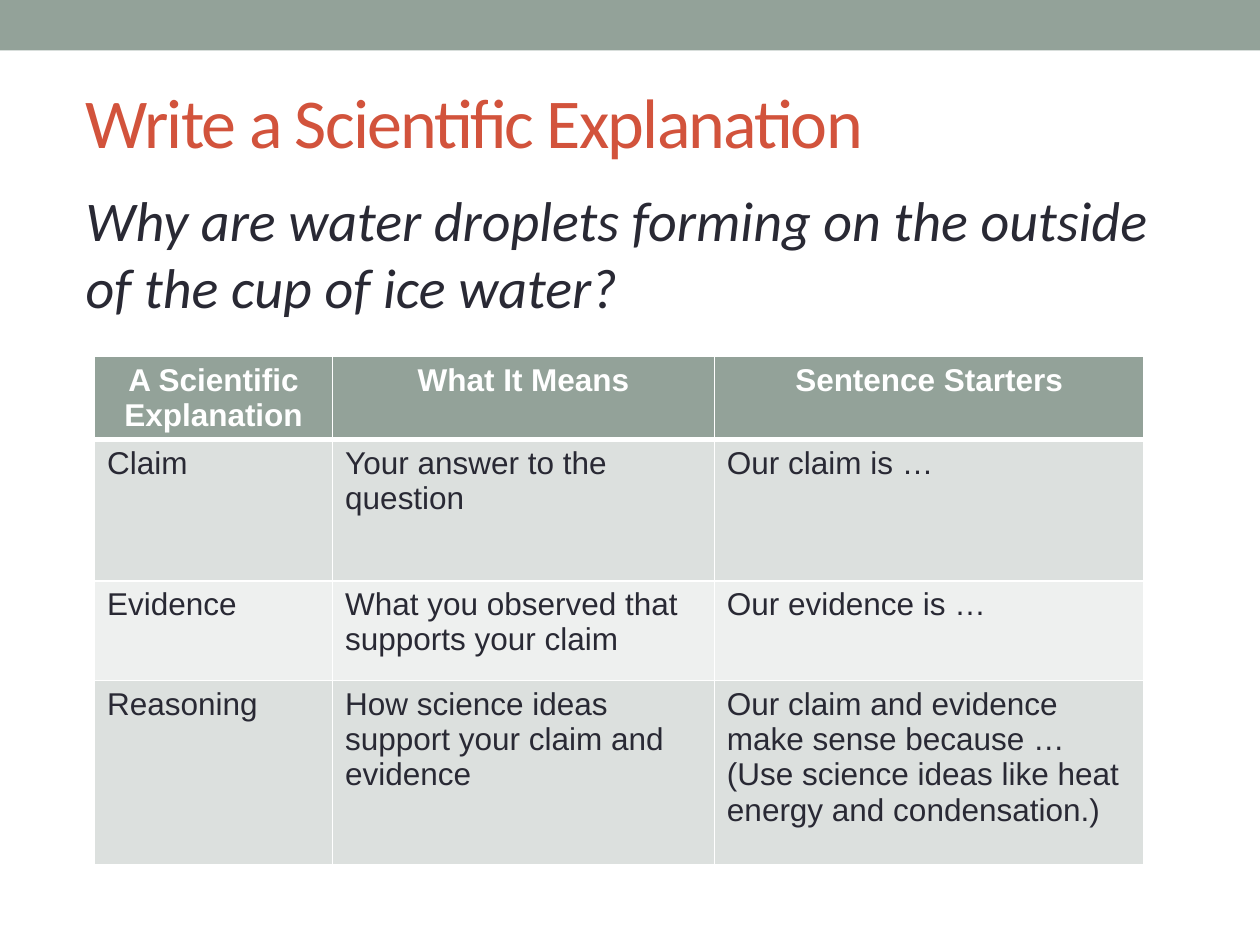
from dataclasses import dataclass

from lxml import etree
from pptx import Presentation
from pptx import util as u
from pptx.dml import color
from pptx.enum import shapes, text
from pptx.oxml import ns


@dataclass(frozen=True)
class Theme:
    sage: str = "93A299"
    rust: str = "D2533C"
    ink: str = "292934"
    white: str = "FFFFFF"
    bands: tuple = ("DCE0DE", "EEF0EF")
    heading_font: str = "Calibri"
    table_font: str = "Arial"
    title_size: int = 40
    question_size: int = 32
    table_size: int = 18
    thin: int = 1
    thick: int = 3


THEME = Theme()
WIDTH, HEIGHT = 10, 7.5
COLUMNS = (1.89, 3.03, 3.41)
ROWS = (0.45, 1.12, 0.79, 1.46)
CONTENT = (
    ("A Scientific Explanation", "What It Means", "Sentence Starters"),
    ("Claim", "Your answer to the question", "Our claim is …"),
    ("Evidence", "What you observed that supports your claim", "Our evidence is …"),
    (
        "Reasoning",
        "How science ideas support your claim and evidence",
        "Our claim and evidence make sense because … "
        "(Use science ideas like heat energy and condensation.)",
    ),
)


def rgb(value):
    return color.RGBColor.from_string(value)


def set_values(target, values):
    for name, value in values.items():
        setattr(target, name, value)


def format_runs(paragraph, ink, **values):
    for run in paragraph.runs:
        set_values(run.font, values)
        run.font.color.rgb = rgb(ink)


def add_band(slide):
    shape = slide.shapes.add_shape(
        shapes.MSO_SHAPE.RECTANGLE, 0, 0, u.Inches(WIDTH), u.Inches(0.4)
    )
    shape.shadow.inherit = False
    shape.fill.solid()
    shape.fill.fore_color.rgb = rgb(THEME.sage)
    shape.line.fill.background()


def fill_placeholder(shape, box, words, anchor, ink, **font):
    names = ("left", "top", "width", "height")
    set_values(shape, dict(zip(names, map(u.Inches, box))))
    frame = shape.text_frame
    frame.text = words
    set_values(frame, {
        "word_wrap": True,
        "auto_size": text.MSO_AUTO_SIZE.NONE,
        "vertical_anchor": anchor,
    })
    paragraph = frame.paragraphs[0]
    paragraph.alignment = text.PP_ALIGN.LEFT
    format_runs(paragraph, ink, name=THEME.heading_font, **font)
    return paragraph


def remove_bullet(paragraph):
    properties = paragraph._p.get_or_add_pPr()
    set_indent = {"marL": "0", "indent": "0"}
    for name, value in set_indent.items():
        properties.set(name, value)
    etree.SubElement(properties, ns.qn("a:buNone"))


def add_borders(cell, widths):
    properties = cell._tc.get_or_add_tcPr()
    for side, width in widths.items():
        line = etree.SubElement(
            properties, ns.qn(f"a:ln{side}"), w=str(u.Pt(width))
        )
        fill = etree.SubElement(line, ns.qn("a:solidFill"))
        etree.SubElement(fill, ns.qn("a:srgbClr"), val=THEME.white)


def format_cell(cell, words, row):
    header = row == 0
    cell.text = words
    paragraph = cell.text_frame.paragraphs[0]
    paragraph.alignment = text.PP_ALIGN.CENTER if header else text.PP_ALIGN.LEFT
    format_runs(
        paragraph,
        THEME.white if header else THEME.ink,
        name=THEME.table_font,
        size=u.Pt(THEME.table_size),
        bold=header,
    )
    add_borders(cell, {
        "L": THEME.thin,
        "R": THEME.thin,
        "T": THEME.thick if row == 1 else THEME.thin,
        "B": THEME.thick if header else THEME.thin,
    })
    cell.fill.solid()
    cell.fill.fore_color.rgb = rgb(
        THEME.sage if header else THEME.bands[(row - 1) % len(THEME.bands)]
    )


def add_explanation_table(slide):
    table = slide.shapes.add_table(
        len(ROWS), len(COLUMNS), u.Inches(0.75), u.Inches(2.83),
        u.Inches(sum(COLUMNS)), u.Inches(sum(ROWS)),
    ).table
    for column, width in zip(table.columns, COLUMNS):
        column.width = u.Inches(width)
    for index, (row, height) in enumerate(zip(table.rows, ROWS)):
        row.height = u.Inches(height)
        for cell, words in zip(row.cells, CONTENT[index]):
            format_cell(cell, words, index)


def main():
    presentation = Presentation()
    presentation.slide_width = u.Inches(WIDTH)
    presentation.slide_height = u.Inches(HEIGHT)
    slide = presentation.slides.add_slide(presentation.slide_layouts[1])
    add_band(slide)
    title = fill_placeholder(
        slide.shapes.title, (0.58, 0.42, 9, 1.08),
        "Write a Scientific Explanation", text.MSO_ANCHOR.MIDDLE,
        THEME.rust, size=u.Pt(THEME.title_size),
    )
    title.runs[0].font._element.set("spc", "-100")
    question = fill_placeholder(
        slide.placeholders[1], (0.58, 1.42, 8.92, 5.7),
        "Why are water droplets forming on the outside \vof the cup of ice water?",
        text.MSO_ANCHOR.TOP, THEME.ink,
        size=u.Pt(THEME.question_size), italic=True,
    )
    remove_bullet(question)
    add_explanation_table(slide)
    presentation.save("out.pptx")


if __name__ == "__main__":
    main()
